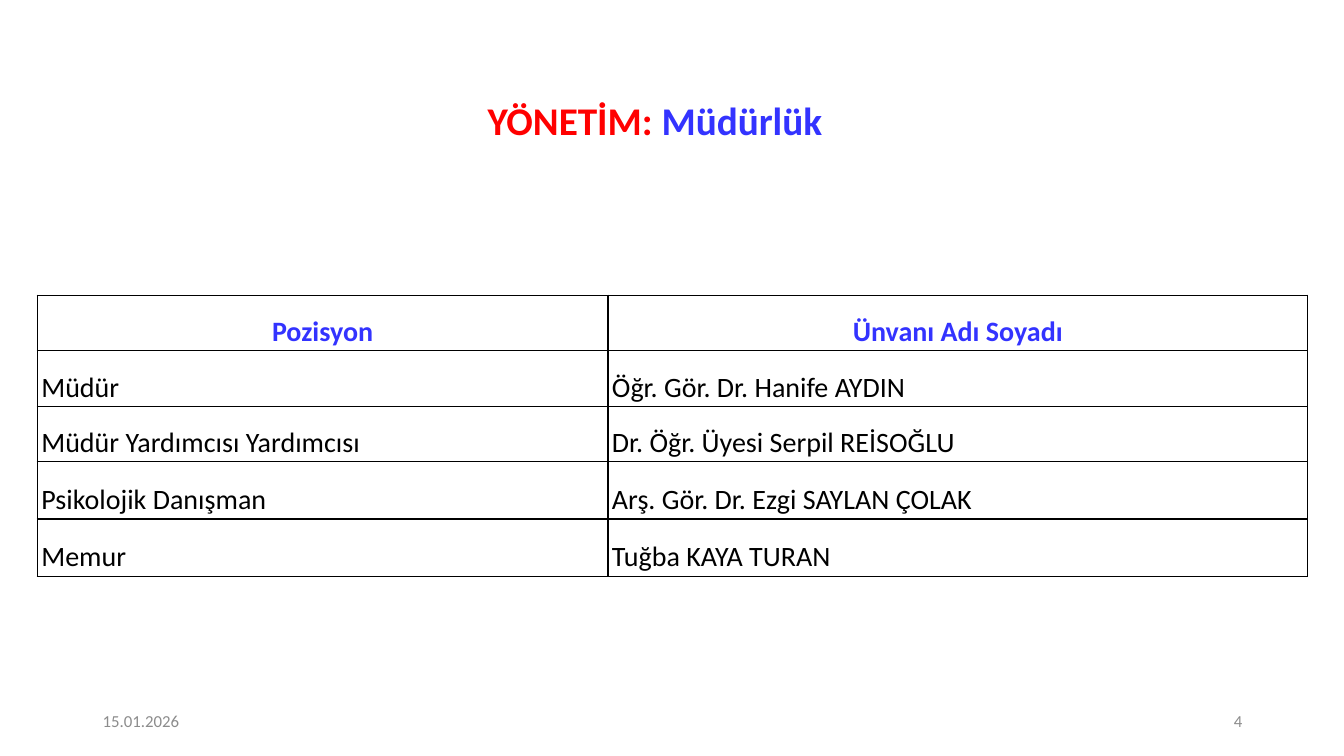
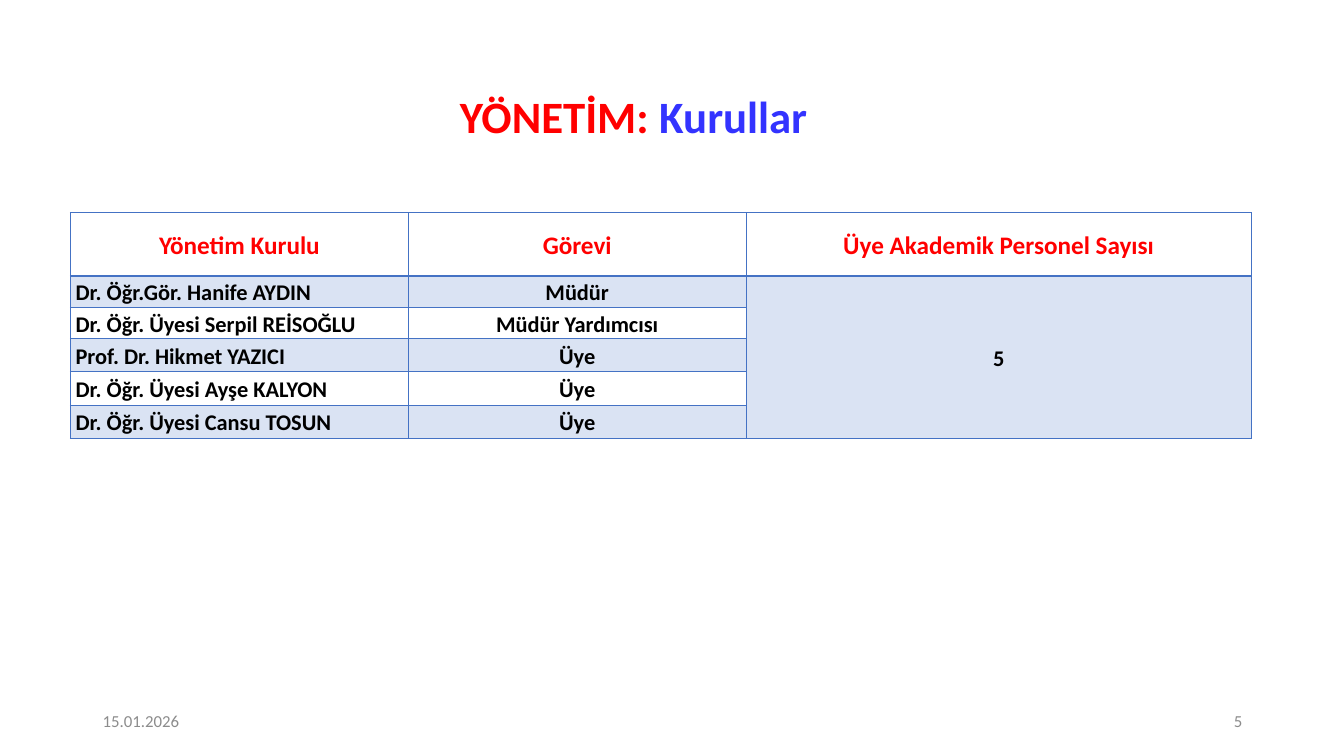
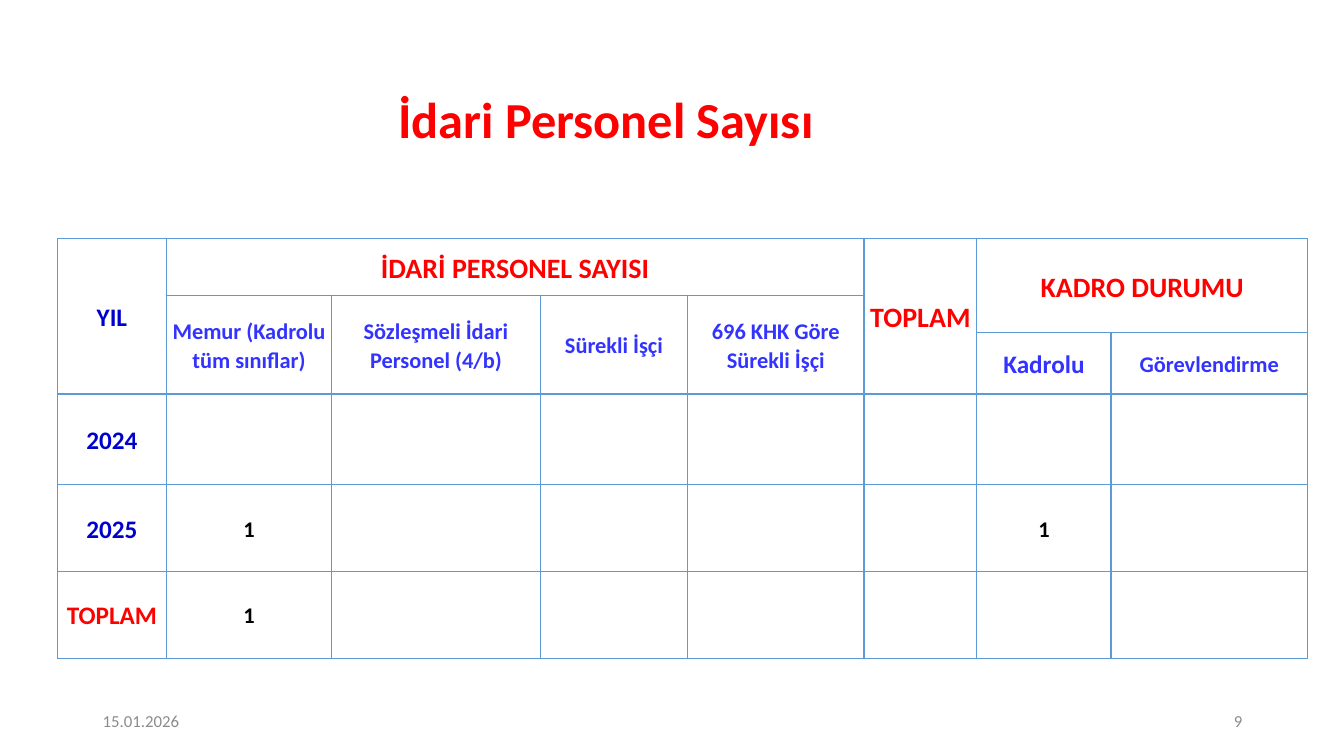
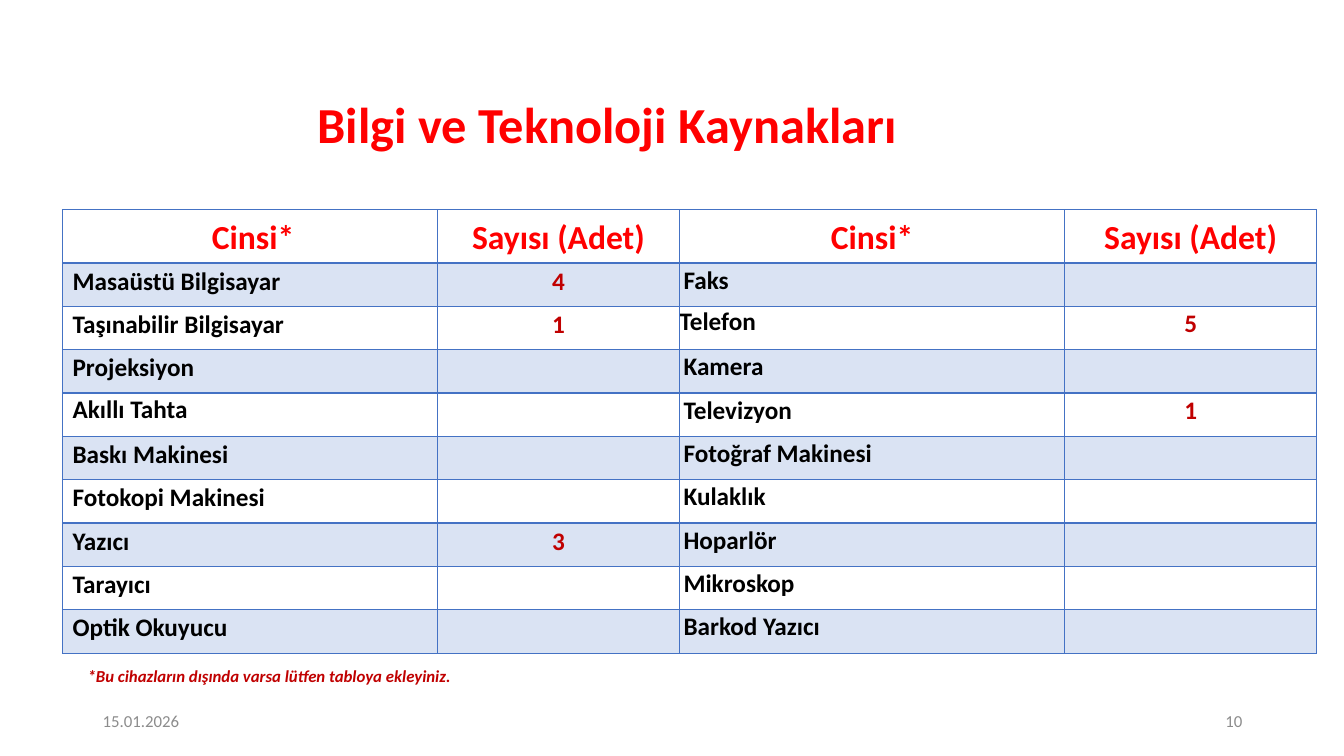
import pptx
import pptx.util
import pptx.dml.color
import pptx.enum.text
import lxml.etree

Inches = pptx.util.Inches
Pt = pptx.util.Pt
hue = pptx.dml.color.RGBColor.from_string
Align = pptx.enum.text.PP_ALIGN
MID = pptx.enum.text.MSO_ANCHOR.MIDDLE
TOP = pptx.enum.text.MSO_ANCHOR.TOP

RED, BLUE, NAVY, WINE = "FF0000", "3333FF", "0000CC", "C00000"
BLACK, GREY, LINE, SKY, BAND = "000000", "8C8C8C", "4472C4", "5B9BD5", "DAE3F3"
NS = "http://schemas.openxmlformats.org/drawingml/2006/main"


def write(frame, runs, size, align=Align.CENTER, bold=True, gap=1.07):
    line = frame.paragraphs[0]
    line.alignment = align
    line.line_spacing = gap
    line.font.name = "Calibri"
    line.font.size = Pt(size)
    line.font.bold = bold
    line.font.color.rgb = hue(runs[0][1])
    for text, tint in runs:
        run = line.add_run()
        run.text = text
        if tint != runs[0][1]:
            run.font.color.rgb = hue(tint)
    return line


def grid(page, left, top, cols, rows, tint, side=0, head=1, bands=False):
    table = page.shapes.add_table(
        len(rows), len(cols), Inches(left), Inches(top),
        Inches(sum(cols)), Inches(sum(rows))).table
    table.first_row = table.horz_banding = False
    for col, width in zip(table.columns, cols):
        col.width = Inches(width)
    for at, (row, height) in enumerate(zip(table.rows, rows)):
        row.height = Inches(height)
        for cell in row.cells:
            cell.margin_left = cell.margin_right = Inches(side)
            cell.margin_top = Inches(0.01)
            cell.margin_bottom = 0
            cell.vertical_anchor = MID
            props = cell._tc.get_or_add_tcPr()
            wide = {"L": 1, "R": 1, "T": head if at == 1 else 1,
                    "B": head if at == 0 else 1}
            for edge, width in wide.items():
                rule = lxml.etree.SubElement(props, f"{{{NS}}}ln{edge}", w=str(Pt(width)))
                fill = lxml.etree.SubElement(rule, f"{{{NS}}}solidFill")
                lxml.etree.SubElement(fill, f"{{{NS}}}srgbClr", val=tint)
            if bands and at % 2:
                cell.fill.solid()
                cell.fill.fore_color.rgb = hue(BAND)
            else:
                cell.fill.background()
    return table


deck = pptx.Presentation()
deck.slide_width = Inches(13.33)
deck.slide_height = Inches(7.5)

heads = [
    ("4", 28, (1.14, 0.84, 10.71, 0.76), [("YÖNETİM: ", RED), ("Müdürlük", BLUE)]),
    ("5", 32, (0.7, 0.78, 11.17, 0.8), [("YÖNETİM: ", RED), ("Kurullar", BLUE)]),
    ("9", 36, (0.37, 0.83, 11.28, 0.76), [("İdari Personel Sayısı", RED)]),
    ("10", 36, (0.29, 0.85, 11.47, 0.83), [("Bilgi ve Teknoloji Kaynakları", RED)]),
]
pages = []
for num, size, place, title in heads:
    page = deck.slides.add_slide(deck.slide_layouts[6])
    pages.append(page)
    for box, runs, pts, align, bold, gap in [
        (place, title, size, Align.CENTER, True, 0.9),
        ((0.92, 6.95, 3, 0.4), [("15.01.2026", GREY)], 12, Align.LEFT, False, 1),
        ((9.42, 6.95, 3, 0.4), [(num, GREY)], 12, Align.RIGHT, False, 1),
    ]:
        frame = page.shapes.add_textbox(*map(Inches, box)).text_frame
        frame.word_wrap = True
        frame.vertical_anchor = MID
        write(frame, runs, pts, align, bold, gap)
staff, board, count, tools = pages

table = grid(staff, 0.37, 2.93, [5.66, 6.94], [0.55] * 3 + [0.57] * 2, BLACK, 0.04)
people = [
    ("Pozisyon", "Ünvanı Adı Soyadı"),
    ("Müdür", "Öğr. Gör. Dr. Hanife AYDIN"),
    ("Müdür Yardımcısı Yardımcısı", "Dr. Öğr. Üyesi Serpil REİSOĞLU"),
    ("Psikolojik Danışman", "Arş. Gör. Dr. Ezgi SAYLAN ÇOLAK"),
    ("Memur", "Tuğba KAYA TURAN"),
]
for r, row in enumerate(people):
    for c, text in enumerate(row):
        frame = table.cell(r, c).text_frame
        if r == 0:
            write(frame, [(text, BLUE)], 20, gap=1.5)
        else:
            write(frame, [(text, BLACK)], 20, Align.LEFT, False, 1.5)

table = grid(board, 0.7, 2.11, [3.35, 3.35, 5.01], [0.63, 0.31, 0.31, 0.33, 0.33, 0.33],
             LINE, 0.05, 2, True)
table.cell(1, 2).merge(table.cell(5, 2))
members = [
    ("Yönetim Kurulu", "Görevi", "Üye Akademik Personel Sayısı"),
    ("Dr. Öğr.Gör. Hanife AYDIN", "Müdür", "5"),
    ("Dr. Öğr. Üyesi Serpil REİSOĞLU", "Müdür Yardımcısı"),
    ("Prof. Dr. Hikmet YAZICI", "Üye"),
    ("Dr. Öğr. Üyesi Ayşe KALYON", "Üye"),
    ("Dr. Öğr. Üyesi Cansu TOSUN", "Üye"),
]
for r, row in enumerate(members):
    for c, text in enumerate(row):
        frame = table.cell(r, c).text_frame
        if r == 0:
            write(frame, [(text, RED)], 18)
        else:
            write(frame, [(text, BLACK)], 16, Align.CENTER if c else Align.LEFT)

table = grid(count, 0.57, 2.37, [1.08, 1.64, 2.07, 1.46, 1.75, 1.12, 1.33, 1.95],
             [0.56, 0.37, 0.61, 0.9, 0.86, 0.86], SKY, 0.01)
cells = [
    (0, 0, 3, 1, "YIL", 18, NAVY),
    (0, 1, 1, 4, "İDARİ PERSONEL SAYISI", 20, RED),
    (0, 5, 3, 1, "TOPLAM", 20, RED),
    (0, 6, 2, 2, "KADRO DURUMU", 20, RED),
    (1, 1, 2, 1, "Memur (Kadrolu tüm sınıflar)", 16, BLUE),
    (1, 2, 2, 1, "Sözleşmeli İdari Personel (4/b)", 16, BLUE),
    (1, 3, 2, 1, "Sürekli İşçi", 16, BLUE),
    (1, 4, 2, 1, "696 KHK Göre Sürekli İşçi", 16, BLUE),
    (2, 6, 1, 1, "Kadrolu", 18, BLUE),
    (2, 7, 1, 1, "Görevlendirme", 16, BLUE),
    (3, 0, 1, 1, "2024", 18, NAVY),
    (4, 0, 1, 1, "2025", 18, NAVY),
    (4, 1, 1, 1, "1", 16, BLACK),
    (4, 6, 1, 1, "1", 16, BLACK),
    (5, 0, 1, 1, "TOPLAM", 18, RED),
    (5, 1, 1, 1, "1", 16, BLACK),
]
for r, c, down, across, text, size, tint in cells:
    cell = table.cell(r, c)
    if down * across > 1:
        cell.merge(table.cell(r + down - 1, c + across - 1))
    write(cell.text_frame, [(text, tint)], size)

table = grid(tools, 0.62, 2.08, [3.72, 2.4, 3.82, 2.5], [0.53] + [0.43] * 9,
             LINE, 0.04, 2, True)
items = [
    ("Cinsi*", "Sayısı (Adet)", "Cinsi*", "Sayısı (Adet)"),
    ("Masaüstü Bilgisayar", "4", "Faks", ""),
    ("Taşınabilir Bilgisayar", "1", "Telefon", "5"),
    ("Projeksiyon", "", "Kamera", ""),
    ("Akıllı Tahta", "", "Televizyon", "1"),
    ("Baskı Makinesi", "", "Fotoğraf Makinesi", ""),
    ("Fotokopi Makinesi", "", "Kulaklık", ""),
    ("Yazıcı", "3", "Hoparlör", ""),
    ("Tarayıcı", "", "Mikroskop", ""),
    ("Optik Okuyucu", "", "Barkod Yazıcı", ""),
]
for r, row in enumerate(items):
    for c, text in enumerate(row):
        cell = table.cell(r, c)
        if r:
            cell.vertical_anchor = TOP
        if c == 0:
            cell.margin_left = Inches(0.1)
        if c > 1:
            cell.margin_top = 0
        if text == "Telefon":
            cell.margin_left = 0
        if not text:
            continue
        gap = 1 if text in ("Telefon", "Akıllı Tahta") else 1.07
        if r == 0:
            line = write(cell.text_frame, [(text, RED)], 24)
        elif c % 2:
            line = write(cell.text_frame, [(text, WINE)], 18)
        else:
            line = write(cell.text_frame, [(text, BLACK)], 18, Align.LEFT, gap=gap)
        if gap > 1:
            line.space_after = Pt(8)

frame = tools.shapes.add_textbox(*map(Inches, (0.77, 6.56, 5, 0.3))).text_frame
frame.word_wrap = True
note = write(frame, [("*Bu cihazların dışında varsa lütfen tabloya ekleyiniz.", WINE)],
             12, Align.LEFT, gap=1)
note.font.italic = True

deck.save("out.pptx")
